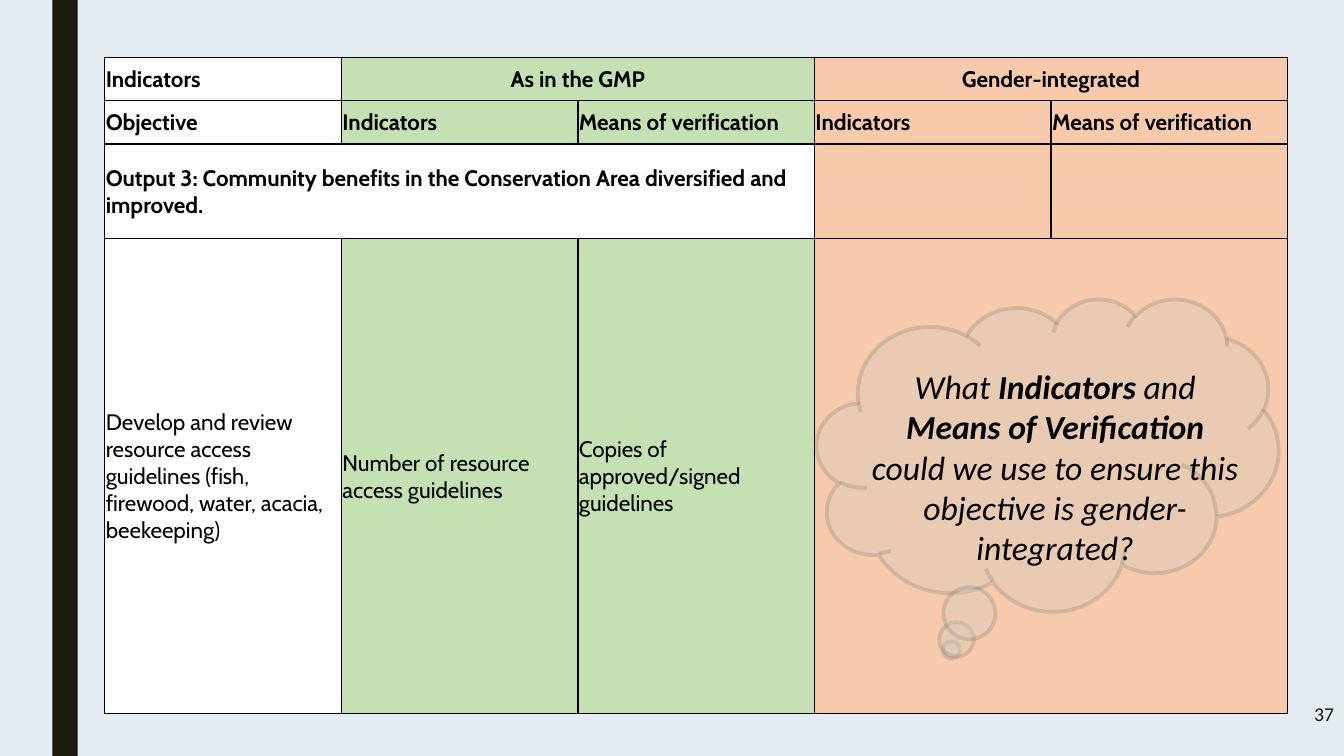
from dataclasses import dataclass

from lxml import etree
from pptx import Presentation
from pptx.dml.color import RGBColor
from pptx.enum.shapes import MSO_SHAPE
from pptx.enum.text import MSO_ANCHOR, PP_ALIGN
from pptx.oxml.ns import qn
from pptx.util import Inches, Pt

RECT, CLOUD = MSO_SHAPE.RECTANGLE, MSO_SHAPE.CLOUD_CALLOUT
LEFT, MID, RIGHT = PP_ALIGN.LEFT, PP_ALIGN.CENTER, PP_ALIGN.RIGHT
TOP, CENTER = MSO_ANCHOR.TOP, MSO_ANCHOR.MIDDLE
WIDE, HIGH = Inches(13.33), Inches(7.5)

COLORS = {
    "back": "E4ECF1", "bar": "191B0E", "ink": "000000",
    "white": "FFFFFF", "green": "C5E0B3", "peach": "F7CAAC",
    "cloud": "D1CBBE", "edge": "686863",
}


@dataclass
class Box:
    """Place and size in percent of the slide."""
    x: float
    y: float
    w: float
    h: float

    def frame(self) -> tuple[int, int, int, int]:
        return across(self.x), down(self.y), across(self.w), down(self.h)


@dataclass
class Part:
    """One run of text."""
    text: str
    size: int
    font: str = "Calibri"
    color: str = "ink"
    bold: bool = False
    slant: bool = False


@dataclass
class Cell:
    row: int
    col: int
    text: str
    fill: str
    cols: int = 1
    rows: int = 1
    bold: bool = True
    align: PP_ALIGN = LEFT


BAR = Box(3.9, 0, 1.88, 100)
GRID = Box(7.8, 7.6, 88, 86.8)
BUBBLE = Box(60.77, 39.47, 34.36, 41.33)
ASK = Box(63.84, 47.73, 29.33, 28.27)
PAGE = Box(92.57, 88.93, 7.43, 11.07)

COLS = 5
ROWS = [5.73, 5.73, 12.53, 23.07, 22.8, 16.93]
OPEN = 3  # first row and column of the area without inner lines

CELLS = [
    Cell(0, 0, "Indicators", "white"),
    Cell(0, 1, "As in the GMP", "green", cols=2, align=MID),
    Cell(0, 3, "Gender-integrated", "peach", cols=2, align=MID),
    Cell(1, 0, "Objective", "white"),
    Cell(1, 1, "Indicators", "green"),
    Cell(1, 2, "Means of verification", "green"),
    Cell(1, 3, "Indicators", "peach"),
    Cell(1, 4, "Means of verification", "peach"),
    Cell(2, 0, "Output 3: Community benefits in the Conservation Area "
         "diversified and improved.", "white", cols=3),
    Cell(2, 3, "", "peach"),
    Cell(2, 4, "", "peach"),
    Cell(3, 0, "Develop and review resource access guidelines (fish, "
         "firewood, water, acacia, beekeeping)", "white", rows=3, bold=False),
    Cell(3, 1, "Number of resource access guidelines", "green",
         rows=3, bold=False),
    Cell(3, 2, "Copies of approved/signed guidelines", "green",
         rows=3, bold=False),
    Cell(3, 3, "", "peach"),
    Cell(3, 4, "", "peach"),
    Cell(4, 3, "", "peach"),
    Cell(4, 4, "", "peach", rows=2),
    Cell(5, 3, "", "peach"),
]

QUERY = [
    Part("What ", 24, slant=True),
    Part("Indicators", 24, bold=True, slant=True),
    Part(" and ", 24, slant=True),
    Part("Means of Verification ", 24, bold=True, slant=True),
    Part("could we use to ensure this objective is gender-integrated?",
         24, slant=True),
]


def across(share: float) -> int:
    return round(WIDE * share / 100)


def down(share: float) -> int:
    return round(HIGH * share / 100)


def tint(name: str) -> RGBColor:
    return RGBColor.from_string(COLORS[name])


def write(frame, parts: list[Part], align: PP_ALIGN) -> None:
    para = frame.paragraphs[0]
    para.alignment = align
    for part in parts:
        run = para.add_run()
        run.text = part.text
        font = run.font
        font.name, font.size = part.font, Pt(part.size)
        font.bold, font.italic = part.bold, part.slant
        font.color.rgb = tint(part.color)


def add_text(slide, box: Box, parts: list[Part], align: PP_ALIGN,
             anchor: MSO_ANCHOR) -> None:
    frame = slide.shapes.add_textbox(*box.frame()).text_frame
    frame.word_wrap = True
    frame.vertical_anchor = anchor
    write(frame, parts, align)


def add_form(slide, kind: MSO_SHAPE, box: Box, fill: str):
    form = slide.shapes.add_shape(kind, *box.frame())
    form.shadow.inherit = False
    form.fill.solid()
    form.fill.fore_color.rgb = tint(fill)
    form.line.fill.background()
    return form


def add_edges(spot, item: Cell) -> None:
    """Draw the four sides; the open area keeps only its outline."""
    free = item.row >= OPEN and item.col >= OPEN
    sides = {
        "L": not free or item.col == OPEN,
        "R": not free or item.col + item.cols == COLS,
        "T": not free or item.row == OPEN,
        "B": not free or item.row + item.rows == len(ROWS),
    }
    props = spot._tc.get_or_add_tcPr()
    for side, shown in sides.items():
        line = etree.SubElement(props, qn(f"a:ln{side}"), w=str(Pt(1)))
        if shown:
            fill = etree.SubElement(line, qn("a:solidFill"))
            etree.SubElement(fill, qn("a:srgbClr"), val=COLORS["ink"])
        else:
            etree.SubElement(line, qn("a:noFill"))


def add_grid(slide) -> None:
    table = slide.shapes.add_table(len(ROWS), COLS, *GRID.frame()).table
    for col in table.columns:
        col.width = across(GRID.w / COLS)
    for row, share in zip(table.rows, ROWS):
        row.height = down(share)
    for item in CELLS:
        spot = table.cell(item.row, item.col)
        if item.rows * item.cols > 1:
            spot.merge(table.cell(item.row + item.rows - 1,
                                  item.col + item.cols - 1))
        add_edges(spot, item)
        spot.fill.solid()
        spot.fill.fore_color.rgb = tint(item.fill)
        spot.vertical_anchor = CENTER
        spot.margin_left = spot.margin_right = spot.margin_top = Inches(0.01)
        spot.margin_bottom = 0
        if item.text:
            write(spot.text_frame,
                  [Part(item.text, 16, "Cabin", bold=item.bold)], item.align)


def add_cloud(slide) -> None:
    cloud = add_form(slide, CLOUD, BUBBLE, "cloud")
    cloud.line.color.rgb = tint("edge")
    cloud.line.width = Pt(2.75)
    # See-through fill, then outline
    hues = list(cloud._element.spPr.iter(qn("a:srgbClr")))
    for hue, share in zip(hues, (36, 22)):
        etree.SubElement(hue, qn("a:alpha"), val=str(share * 1000))


def main() -> None:
    deck = Presentation()
    deck.slide_width, deck.slide_height = WIDE, HIGH
    slide = deck.slides.add_slide(deck.slide_layouts[6])

    # Backdrop
    slide.background.fill.solid()
    slide.background.fill.fore_color.rgb = tint("back")
    add_form(slide, RECT, BAR, "bar")

    # Table, question and page number
    add_grid(slide)
    add_cloud(slide)
    add_text(slide, ASK, QUERY, MID, TOP)
    add_text(slide, PAGE, [Part("37", 14, color="bar")], RIGHT, CENTER)
    deck.save("out.pptx")


if __name__ == "__main__":
    main()
